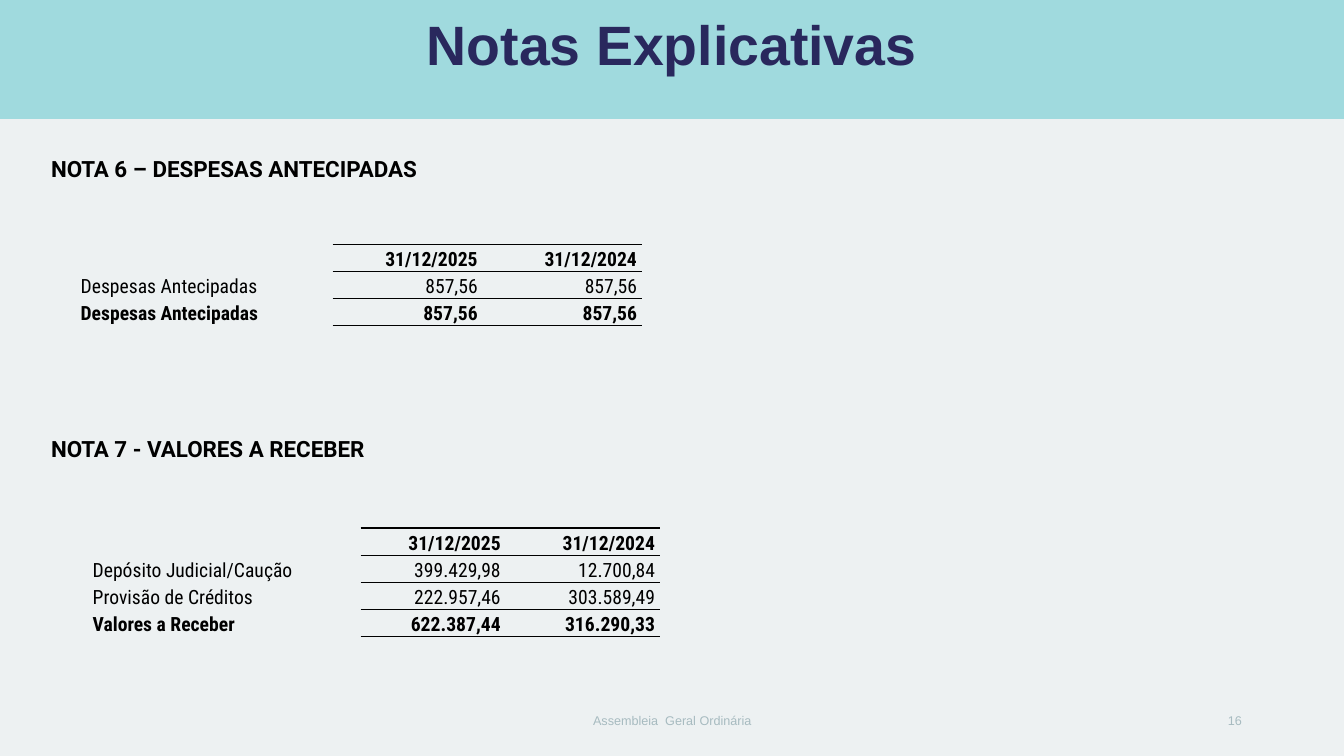
from dataclasses import dataclass

import pptx
import pptx.dml.color
import pptx.enum.shapes
import pptx.enum.text
import pptx.oxml
import pptx.oxml.ns
import pptx.util

Pt = pptx.util.Pt
ALIGN = pptx.enum.text.PP_ALIGN
ANCHOR = pptx.enum.text.MSO_ANCHOR


@dataclass(frozen=True)
class Theme:
    background: str = "EDF1F2"
    band: str = "A0DADE"
    title: str = "29285D"
    ink: str = "000000"
    muted: str = "A7BBC0"
    title_font: str = "Arial"
    note_font: str = "Roboto"
    table_font: str = "Roboto Condensed"
    title_size: float = 39.6
    note_size: float = 16
    table_size: float = 14
    footer_size: float = 9
    rule_width: float = 1
    row_height: float = 19.2


THEME = Theme()
PLAIN_TABLE_STYLE = "{2D5ABB26-0587-4C30-8999-92F81FD0307C}"


def rgb(color):
    return pptx.dml.color.RGBColor.from_string(color)


def write(paragraph, text, font, size, color, bold=False, align=ALIGN.LEFT):
    paragraph.alignment = align
    run = paragraph.add_run()
    run.text = text
    run.font.name = font
    run.font.size = Pt(size)
    run.font.bold = bold
    run.font.color.rgb = rgb(color)


def add_band(slide, width, height):
    band = slide.shapes.add_shape(
        pptx.enum.shapes.MSO_SHAPE.RECTANGLE, 0, 0, width, height)
    band.shadow.inherit = False
    band.fill.solid()
    band.fill.fore_color.rgb = rgb(THEME.band)
    band.line.fill.background()


def add_label(slide, box, text, font, size, color, bold=False, align=ALIGN.LEFT):
    frame = slide.shapes.add_textbox(*map(Pt, box)).text_frame
    frame.word_wrap = True
    frame.vertical_anchor = ANCHOR.MIDDLE
    frame.margin_top = frame.margin_bottom = 0
    write(frame.paragraphs[0], text, font, size, color, bold, align)


def add_note_heading(slide, top, text):
    add_label(slide, (29.5, top, 594.7, 26.6), text,
              THEME.note_font, THEME.note_size, THEME.ink, bold=True)


def add_rule(cell, edge):
    """Draw one horizontal cell border; edge is lnT or lnB."""
    line = pptx.oxml.parse_xml(
        f'<a:{edge} {pptx.oxml.ns.nsdecls("a")} w="{Pt(THEME.rule_width)}">'
        f'<a:solidFill><a:srgbClr val="{THEME.ink}"/></a:solidFill></a:{edge}>')
    cell._tc.get_or_add_tcPr().append(line)


def add_balance_table(slide, left, top, widths, rows):
    """Add a table whose header and total rows are ruled above and below."""
    count = len(rows)
    ruled_edges = {0, 1, count - 1, count}
    frame = slide.shapes.add_table(
        count, len(widths), Pt(left), Pt(top),
        Pt(sum(widths)), Pt(THEME.row_height * count))
    table = frame.table
    table._tbl.tblPr.find(pptx.oxml.ns.qn("a:tableStyleId")).text = PLAIN_TABLE_STYLE
    table.horz_banding = False
    for column, width in zip(table.columns, widths):
        column.width = Pt(width)
    for r, values in enumerate(rows):
        table.rows[r].height = Pt(THEME.row_height)
        for c, value in enumerate(values):
            cell = table.cell(r, c)
            cell.margin_left = cell.margin_right = Pt(3.6)
            cell.margin_top = cell.margin_bottom = 0
            cell.vertical_anchor = ANCHOR.BOTTOM
            if c and r in ruled_edges:
                add_rule(cell, "lnT")
            if c and r + 1 in ruled_edges:
                add_rule(cell, "lnB")
            cell.fill.background()
            paragraph = cell.text_frame.paragraphs[0]
            if value:
                paragraph.line_spacing = 1.15
                write(paragraph, value, THEME.table_font, THEME.table_size,
                      THEME.ink, bold=r in (0, count - 1),
                      align=ALIGN.RIGHT if c else ALIGN.LEFT)
            else:
                paragraph.font.size = Pt(THEME.footer_size)


def main():
    deck = pptx.Presentation()
    deck.slide_width, deck.slide_height = Pt(960), Pt(540)
    slide = deck.slides.add_slide(deck.slide_layouts[6])
    slide.background.fill.solid()
    slide.background.fill.fore_color.rgb = rgb(THEME.background)

    add_band(slide, deck.slide_width, Pt(85))
    add_label(slide, (10.8, 8, 938.2, 46), "Notas Explicativas", THEME.title_font,
              THEME.title_size, THEME.title, bold=True, align=ALIGN.CENTER)
    footer_style = (THEME.title_font, THEME.footer_size, THEME.muted)
    add_label(slide, (318.2, 500.4, 324, 28.8), "Assembleia  Geral Ordinária",
              *footer_style, align=ALIGN.CENTER)
    add_label(slide, (678.2, 500.4, 216, 28.8), "16",
              *footer_style, align=ALIGN.RIGHT)

    dates = ("", "31/12/2025", "31/12/2024")
    add_note_heading(slide, 107.3, "NOTA 6 – DESPESAS ANTECIPADAS")
    add_balance_table(slide, 54, 174.7, (183.6, 107.3, 113.8), [
        dates,
        ("Despesas Antecipadas", "857,56", "857,56"),
        ("Despesas Antecipadas", "857,56", "857,56"),
    ])
    add_note_heading(slide, 307.4, "NOTA 7 - VALORES A RECEBER")
    add_balance_table(slide, 62.6, 377.2, (195.1, 103.7, 110.2), [
        dates,
        ("Depósito Judicial/Caução", "399.429,98", "12.700,84"),
        ("Provisão de Créditos", "222.957,46", "303.589,49"),
        ("Valores a Receber", "622.387,44", "316.290,33"),
    ])
    deck.save("out.pptx")


if __name__ == "__main__":
    main()
